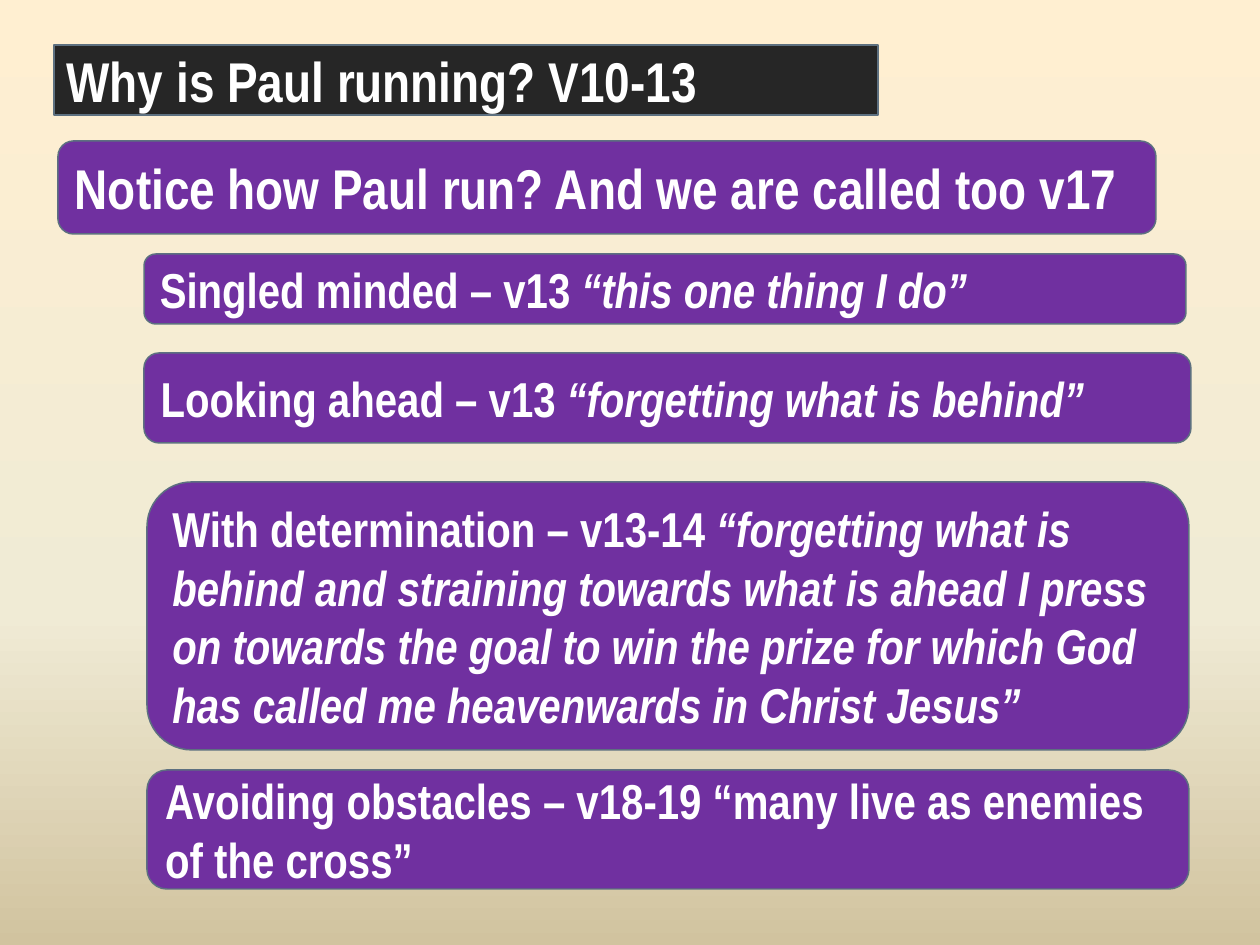
"""Build a slide of rounded banners on how Paul runs."""
import copy
from dataclasses import dataclass

import pptx
import pptx.dml.color
import pptx.enum.shapes
import pptx.enum.text
import pptx.oxml
import pptx.oxml.ns
import pptx.util

PX = 914400 // 126
RGBColor = pptx.dml.color.RGBColor
CHARCOAL = RGBColor(0x26, 0x26, 0x26)
PURPLE = RGBColor(0x70, 0x30, 0xA0)
SLATE = RGBColor(0x5D, 0x70, 0x80)
WHITE = RGBColor(0xFF, 0xFF, 0xFF)
CREAM = RGBColor(0xFF, 0xEF, 0xD1)
IVORY = RGBColor(0xF0, 0xEB, 0xD5)
SAND = RGBColor(0xD1, 0xC3, 0x9F)
BACKDROP = [(0, CREAM), (0.65, IVORY), (1, SAND)]


@dataclass
class Banner:
    left: int
    top: int
    width: int
    height: int
    point: str
    quote: str = ""
    size: int = 28
    fill: RGBColor = PURPLE


HEADING = Banner(54, 45, 824, 70, "Why is Paul running? V10-13", size=32, fill=CHARCOAL)
BANNERS = [
    Banner(58, 141, 1098, 93, "Notice how Paul run? And we are called too v17", size=32),
    Banner(144, 254, 1042, 70, "Singled minded – v13 ", "“this one thing I do”"),
    Banner(144, 353, 1047, 90, "Looking ahead – v13 ", "“forgetting what is behind”"),
    Banner(147, 482, 1042, 268, "With determination – v13-14 ",
           "“forgetting what is behind and straining towards what is ahead I press on "
           "towards the goal to win the prize for which God has called me heavenwards "
           "in Christ Jesus”"),
    Banner(147, 770, 1042, 119,
           "Avoiding obstacles – v18-19 “many live as enemies of the cross”"),
]


def paint_background(slide: pptx.slide.Slide) -> None:
    """Fill the background with a three-stop vertical gradient."""
    fill = slide.background.fill
    fill.gradient()
    fill.gradient_angle = 270
    stop_list = slide._element.find(".//" + pptx.oxml.ns.qn("a:gsLst"))
    stop_list.append(copy.deepcopy(stop_list[-1]))
    for stop, (position, color) in zip(fill.gradient_stops, BACKDROP):
        stop.position = position
        stop.color.rgb = color


def round_title(title: pptx.shapes.base.BaseShape) -> None:
    """Give the title placeholder a rounded outline."""
    outline = pptx.oxml.parse_xml(
        f'<a:prstGeom {pptx.oxml.ns.nsdecls("a")} prst="roundRect"><a:avLst/></a:prstGeom>')
    title._element.spPr.find(pptx.oxml.ns.qn("a:xfrm")).addnext(outline)


def place(shape: pptx.shapes.base.BaseShape, banner: Banner) -> None:
    """Set the position of a banner."""
    shape.left, shape.top = banner.left * PX, banner.top * PX
    shape.width, shape.height = banner.width * PX, banner.height * PX


def style_banner(shape: pptx.shapes.autoshape.Shape, banner: Banner) -> None:
    """Fill a banner and write its point and quote."""
    shape.fill.solid()
    shape.fill.fore_color.rgb = banner.fill
    shape.line.color.rgb = SLATE
    shape.line.width = pptx.util.Pt(0.85)
    shape.shadow.inherit = False
    frame = shape.text_frame
    frame.word_wrap = True
    frame.auto_size = pptx.enum.text.MSO_AUTO_SIZE.NONE
    frame.vertical_anchor = pptx.enum.text.MSO_ANCHOR.MIDDLE
    paragraph = frame.paragraphs[0]
    paragraph.alignment = pptx.enum.text.PP_ALIGN.LEFT
    for words, italic in ((banner.point, False), (banner.quote, True)):
        if words:
            run = paragraph.add_run()
            run.text = words
            run.font.name = "Arial Narrow"
            run.font.size = pptx.util.Pt(banner.size)
            run.font.bold = True
            run.font.italic = italic
            run.font.color.rgb = WHITE


def main() -> None:
    """Build and save the slide."""
    deck = pptx.Presentation()
    deck.slide_width, deck.slide_height = pptx.util.Inches(10), pptx.util.Inches(7.5)
    slide = deck.slides.add_slide(deck.slide_layouts.get_by_name("Title Only"))
    paint_background(slide)
    heading = slide.shapes.title
    place(heading, HEADING)
    round_title(heading)
    style_banner(heading, HEADING)
    for banner in BANNERS:
        shape = slide.shapes.add_shape(
            pptx.enum.shapes.MSO_SHAPE.ROUNDED_RECTANGLE, 0, 0, PX, PX)
        place(shape, banner)
        style_banner(shape, banner)
    deck.save("out.pptx")


if __name__ == "__main__":
    main()
